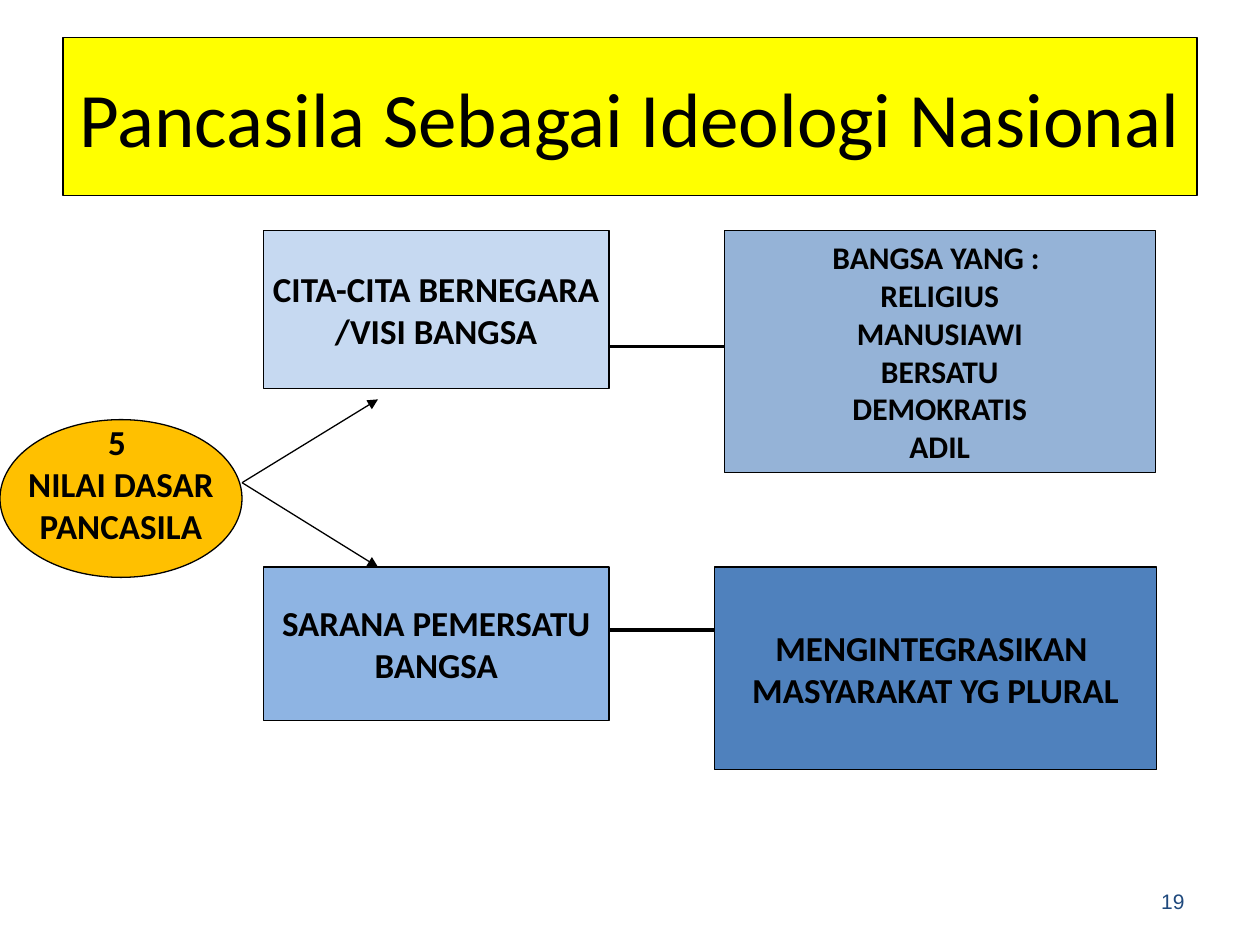
"""Build the slide on Pancasila as the national ideology."""
import pptx
import pptx.dml.color
import pptx.enum.shapes
import pptx.enum.text
import pptx.oxml.ns
import pptx.util
from lxml import etree

Cm = pptx.util.Cm
Pt = pptx.util.Pt
RGBColor = pptx.dml.color.RGBColor
SHAPE = pptx.enum.shapes.MSO_SHAPE
ALIGN = pptx.enum.text.PP_ALIGN
qn = pptx.oxml.ns.qn

BLACK = RGBColor(0x00, 0x00, 0x00)
NAVY = RGBColor(0x1F, 0x49, 0x7D)
YELLOW = RGBColor(0xFF, 0xFF, 0x00)
AMBER = RGBColor(0xFF, 0xC0, 0x00)
PALE_BLUE = RGBColor(0xC6, 0xD9, 0xF1)
SKY_BLUE = RGBColor(0x8E, 0xB4, 0xE3)
GREY_BLUE = RGBColor(0x95, 0xB3, 0xD7)
STRONG_BLUE = RGBColor(0x4F, 0x81, 0xBD)


class Diagram:
    font = "Calibri"
    ink = BLACK
    outline = 0.75

    def __init__(self, slide):
        self.slide = slide

    def label(self, shape, text, size, bold=False, font=None, color=None, align=ALIGN.CENTER):
        frame = shape.text_frame
        frame.text = text
        frame.vertical_anchor = pptx.enum.text.MSO_ANCHOR.MIDDLE
        frame.word_wrap = False
        for paragraph in frame.paragraphs:
            paragraph.alignment = align
            for run in paragraph.runs:
                run.font.name = font or self.font
                run.font.size = Pt(size)
                run.font.bold = bold
                run.font.color.rgb = color or self.ink

    def box(self, text, left, top, width, height, fill, size=20, bold=True, kind=SHAPE.RECTANGLE):
        shape = self.slide.shapes.add_shape(kind, Cm(left), Cm(top), Cm(width), Cm(height))
        shape.shadow.inherit = False
        shape.fill.solid()
        shape.fill.fore_color.rgb = fill
        shape.line.color.rgb = self.ink
        shape.line.width = Pt(self.outline)
        self.label(shape, text, size, bold)
        return shape

    def page_number(self, text, left, top, width, height):
        number = self.slide.shapes.add_textbox(Cm(left), Cm(top), Cm(width), Cm(height))
        self.label(number, text, 12, font="Arial", color=NAVY, align=ALIGN.RIGHT)
        number.text_frame.word_wrap = True

    def link(self, start, end, width=outline, arrow=False):
        connector = self.slide.shapes.add_connector(
            pptx.enum.shapes.MSO_CONNECTOR.STRAIGHT, *map(Cm, start + end))
        connector.line.color.rgb = self.ink
        connector.line.width = Pt(width)
        properties = connector.element.spPr
        if arrow:
            etree.SubElement(properties.find(qn("a:ln")), qn("a:tailEnd"), type="triangle")
        etree.SubElement(properties, qn("a:effectLst"))


def main():
    deck = pptx.Presentation()
    deck.slide_width, deck.slide_height = Cm(25.4), Cm(19.05)
    diagram = Diagram(deck.slides.add_slide(deck.slide_layouts[6]))

    diagram.box("Pancasila Sebagai Ideologi Nasional", 1.27, 0.76, 22.86, 3.18,
                YELLOW, size=44, bold=False)
    diagram.page_number("19", 18.21, 17.65, 5.92, 1.02)

    values = diagram.box("5 \nNILAI DASAR\nPANCASILA", 0, 8.46, 4.88, 3.18, AMBER, kind=SHAPE.OVAL)
    values.text_frame.margin_bottom = Cm(0.72)

    vision_top, unity_top = 4.65, 11.43
    role_left, role_width = 5.31, 6.97
    goal_left, plural_left = 14.6, 14.4
    diagram.box("CITA-CITA BERNEGARA\n/VISI BANGSA",
                role_left, vision_top, role_width, 3.18, PALE_BLUE)
    diagram.box("SARANA PEMERSATU\nBANGSA", role_left, unity_top, role_width, 3.1, SKY_BLUE)
    diagram.box("BANGSA YANG : \nRELIGIUS\nMANUSIAWI\nBERSATU\nDEMOKRATIS\nADIL",
                goal_left, vision_top, 8.69, 4.88, GREY_BLUE, size=18)
    diagram.box("MENGINTEGRASIKAN \nMASYARAKAT YG PLURAL",
                plural_left, unity_top, 8.92, 4.09, STRONG_BLUE)

    for tip_height in (8.05, unity_top):
        diagram.link((4.88, 9.73), (7.62, tip_height), arrow=True)
    role_right = role_left + role_width
    diagram.link((role_right, 6.98), (goal_left, 6.98), 1.5)
    diagram.link((role_right, 12.7), (plural_left, 12.7), 1.75)

    deck.save("out.pptx")


if __name__ == "__main__":
    main()
